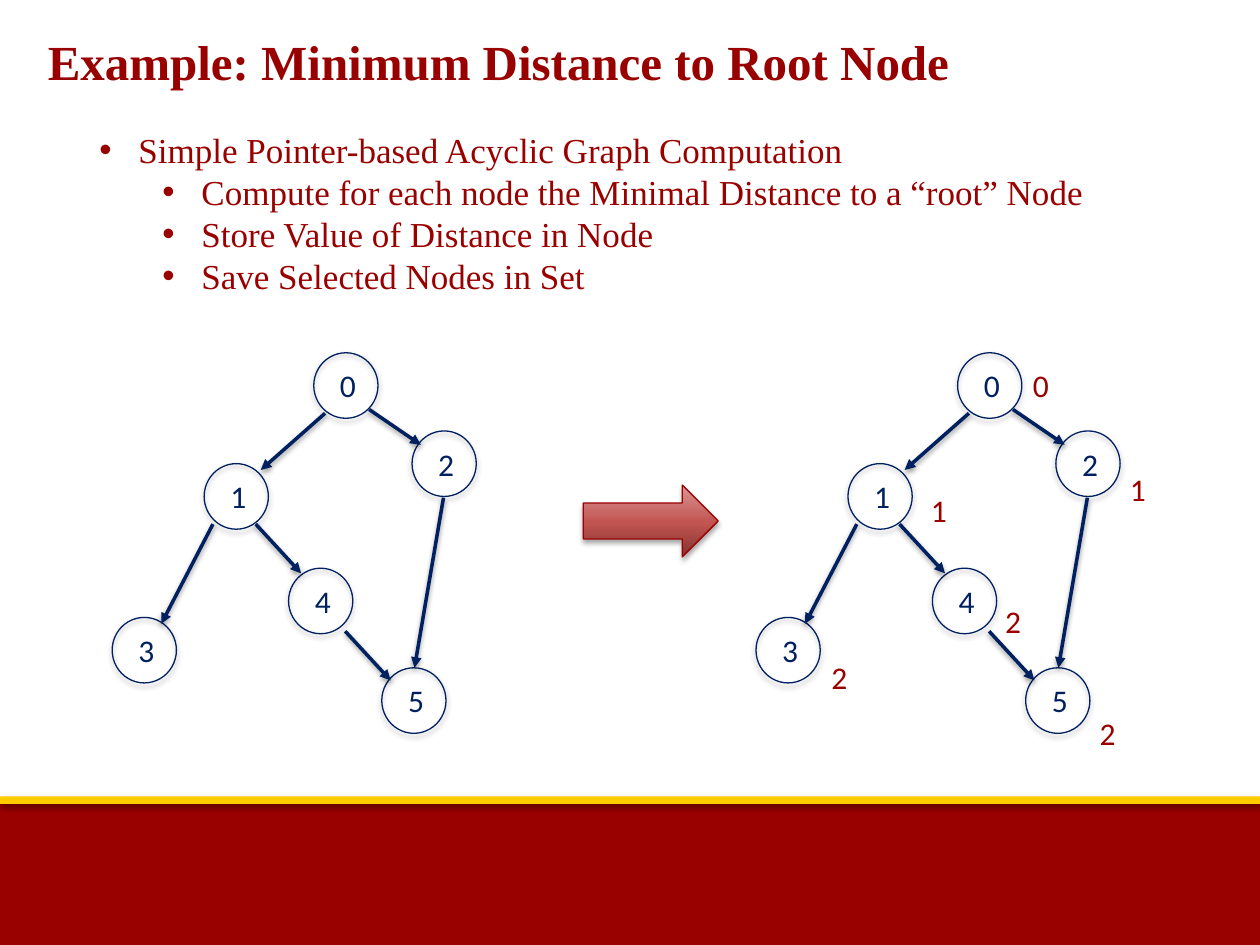
"""Build a slide on computing the minimum distance to a root node."""
import dataclasses

import lxml.etree
import pptx
import pptx.dml.color
import pptx.enum.shapes
import pptx.enum.text
import pptx.oxml.ns
import pptx.util

COLUMNS, ROWS = 100, 75
CELL = pptx.util.Inches(10) // COLUMNS
qn = pptx.oxml.ns.qn
SHAPES = pptx.enum.shapes.MSO_SHAPE
ALIGN = pptx.enum.text.PP_ALIGN


@dataclasses.dataclass(frozen=True)
class Theme:
    """Colours, fonts, type sizes and line widths."""
    red: str = "990000"
    gold: str = "FFCC00"
    navy: str = "002060"
    arrow_stops: tuple = ((0, "85312F"), (48, "C25552"), (100, "D99694"))
    serif: str = "Times New Roman"
    sans: str = "Calibri"
    title: int = 28
    body: int = 20
    label: int = 18
    outline: float = 0.75
    edge: float = 2
    shape_shadow: tuple = (35, 1.8)
    line_shadow: tuple = (38, 1.6)


THEME = Theme()
NODE_SIZE = (5.1, 5.2)
NODES = {"0": (16, 0), "1": (7.3, 8.8), "2": (23.8, 6.2),
         "4": (14, 17.1), "3": (0, 21), "5": (21.4, 25)}
EDGES = [("0", (4.4, 4.5), "2", (0.7, 1.1)),
         ("0", (0.9, 4.8), "1", (4.5, 0.5)),
         ("1", (0.7, 4.8), "3", (3.9, 0.5)),
         ("1", (4.1, 4.8), "4", (1, 0.4)),
         ("4", (4.5, 5), "5", (0.7, 1)),
         ("2", (2.5, 5.3), "5", (2.6, 0))]
DISTANCES = [("0", "0", (5, 0.6), 3.3), ("2", "1", (4.9, 2.6), 3.3),
             ("1", "1", (5.6, 1.7), 17.5), ("3", "2", (5, 2.7), 4.3),
             ("4", "2", (4.8, 2.2), 5), ("5", "2", (4.9, 3.2), 5)]
TASKS = [(0, "Simple Pointer-based Acyclic Graph Computation"),
         (1, "Compute for each node the Minimal Distance to a “root” Node"),
         (1, "Store Value of Distance in Node"),
         (1, "Save Selected Nodes in Set")]


def grid(*cells):
    """Turn grid cells into slide lengths."""
    return [round(cell * CELL) for cell in cells]


def shift(point, offset):
    """Move a grid point by an offset."""
    return point[0] + offset[0], point[1] + offset[1]


def rgb(value):
    """Read a hexadecimal colour."""
    return pptx.dml.color.RGBColor.from_string(value)


def child(parent, tag, **attributes):
    """Append a drawing element with its attributes."""
    texts = {key: str(value) for key, value in attributes.items()}
    return lxml.etree.SubElement(parent, qn(tag), texts)


def add_shadow(figure, shadow):
    """Give a shape or connector a soft shadow below it."""
    opacity, distance = shadow
    effects = child(figure.element.spPr, "a:effectLst")
    outer = child(effects, "a:outerShdw", blurRad=pptx.util.Pt(3.1),
                  dist=pptx.util.Pt(distance), dir=90 * 60000, rotWithShape=0)
    child(child(outer, "a:srgbClr", val="000000"), "a:alpha", val=opacity * 1000)


def set_line(figure, color, width):
    """Set the colour and width of a line."""
    figure.line.color.rgb = rgb(color)
    figure.line.width = pptx.util.Pt(width)


def add_run(paragraph, text, font, size, color, bold=False):
    """Append one formatted run."""
    run = paragraph.add_run()
    run.text = text
    run.font.name = font
    run.font.size = pptx.util.Pt(size)
    run.font.color.rgb = rgb(color)
    run.font.bold = bold


def add_band(slide, top, height, color, shadow):
    """Draw a full-width band."""
    band = slide.shapes.add_shape(SHAPES.RECTANGLE, *grid(0, top, COLUMNS, height))
    band.fill.solid()
    band.fill.fore_color.rgb = rgb(color)
    band.line.fill.background()
    add_shadow(band, shadow)


def add_title(slide, text):
    """Place and fill the title placeholder."""
    title = slide.shapes.title
    title.left, title.top, title.width, title.height = grid(2.8, 2, 88.5, 5.7)
    frame = title.text_frame
    frame.word_wrap = True
    frame.auto_size = pptx.enum.text.MSO_AUTO_SIZE.SHAPE_TO_FIT_TEXT
    frame.vertical_anchor = pptx.enum.text.MSO_ANCHOR.TOP
    frame.paragraphs[0].alignment = ALIGN.LEFT
    add_run(frame.paragraphs[0], text, THEME.serif, THEME.title, THEME.red, True)


def add_tasks(slide):
    """Write the two-level bullet list."""
    frame = slide.shapes.add_textbox(*grid(6.9, 9.7, 82.9, 14.5)).text_frame
    frame.word_wrap = True
    for index, (level, text) in enumerate(TASKS):
        paragraph = frame.add_paragraph() if index else frame.paragraphs[0]
        paragraph.level = level
        paragraph.alignment = ALIGN.JUSTIFY
        properties = paragraph._p.get_or_add_pPr()
        margin, indent = grid(3.1 + 5 * level, -3.1)
        properties.set("marL", str(margin))
        properties.set("indent", str(indent))
        child(properties, "a:buFont", typeface="Arial")
        child(properties, "a:buChar", char="•")
        add_run(paragraph, text, THEME.serif, THEME.body, THEME.red)


def add_label(graph, text, corner, width, color):
    """Write a number in or beside a node."""
    frame = graph.shapes.add_textbox(*grid(*corner, width, 4)).text_frame
    frame.word_wrap = width > 3.3
    add_run(frame.paragraphs[0], text, THEME.sans, THEME.label, color)


def add_node(graph, corner):
    """Draw the circle of a node."""
    node = graph.shapes.add_shape(SHAPES.OVAL, *grid(*corner, *NODE_SIZE))
    node.fill.background()
    set_line(node, THEME.navy, THEME.outline)
    add_shadow(node, THEME.shape_shadow)


def add_edge(graph, start, end):
    """Draw an arrow between two nodes."""
    edge = graph.shapes.add_connector(
        pptx.enum.shapes.MSO_CONNECTOR.STRAIGHT, *grid(*start, *end))
    set_line(edge, THEME.navy, THEME.edge)
    child(edge.element.spPr.find(qn("a:ln")), "a:tailEnd", type="triangle")
    add_shadow(edge, THEME.line_shadow)


def add_graph(slide, origin, distances=()):
    """Draw the graph with any computed distances."""
    graph = slide.shapes.add_group_shape()
    places = {name: shift(origin, place) for name, place in NODES.items()}
    for place in places.values():
        add_node(graph, place)
    for source, leave, target, enter in EDGES:
        add_edge(graph, shift(places[source], leave), shift(places[target], enter))
    for name, place in places.items():
        add_label(graph, name, shift(place, (1.1, 0.6)), 3.3, THEME.navy)
    for name, distance, offset, width in distances:
        add_label(graph, distance, shift(places[name], offset), width, THEME.red)


def add_result_arrow(slide):
    """Draw the shaded arrow between the graphs."""
    arrow = slide.shapes.add_shape(SHAPES.RIGHT_ARROW, *grid(46.3, 38.5, 10.7, 5.7))
    arrow.fill.gradient()
    arrow.fill.gradient_angle = 90
    stops = arrow.element.spPr.find(".//" + qn("a:gsLst"))
    for stop in list(stops):
        stops.remove(stop)
    for position, color in THEME.arrow_stops:
        child(child(stops, "a:gs", pos=position * 1000), "a:srgbClr", val=color)
    set_line(arrow, THEME.red, THEME.outline)
    add_shadow(arrow, THEME.shape_shadow)


def main():
    """Build and save the slide."""
    deck = pptx.Presentation()
    deck.slide_width, deck.slide_height = grid(COLUMNS, ROWS)
    slide = deck.slides.add_slide(deck.slide_layouts.get_by_name("Title Only"))
    add_band(slide, 63.5, 11.5, THEME.red, THEME.shape_shadow)
    add_band(slide, 63.2, 0.6, THEME.gold, THEME.line_shadow)
    add_title(slide, "Example: Minimum Distance to Root Node")
    add_tasks(slide)
    add_graph(slide, (8.9, 28))
    add_graph(slide, (60, 28), DISTANCES)
    add_result_arrow(slide)
    deck.save("out.pptx")


if __name__ == "__main__":
    main()
